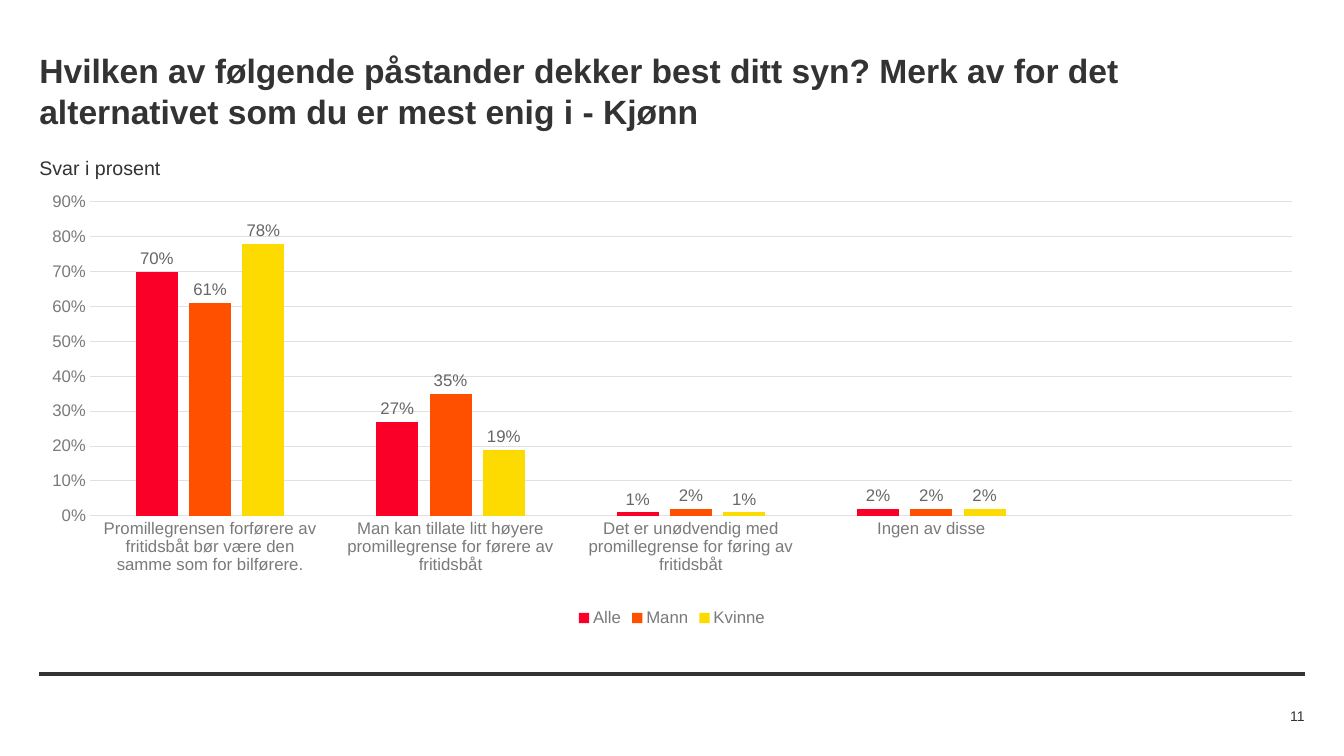
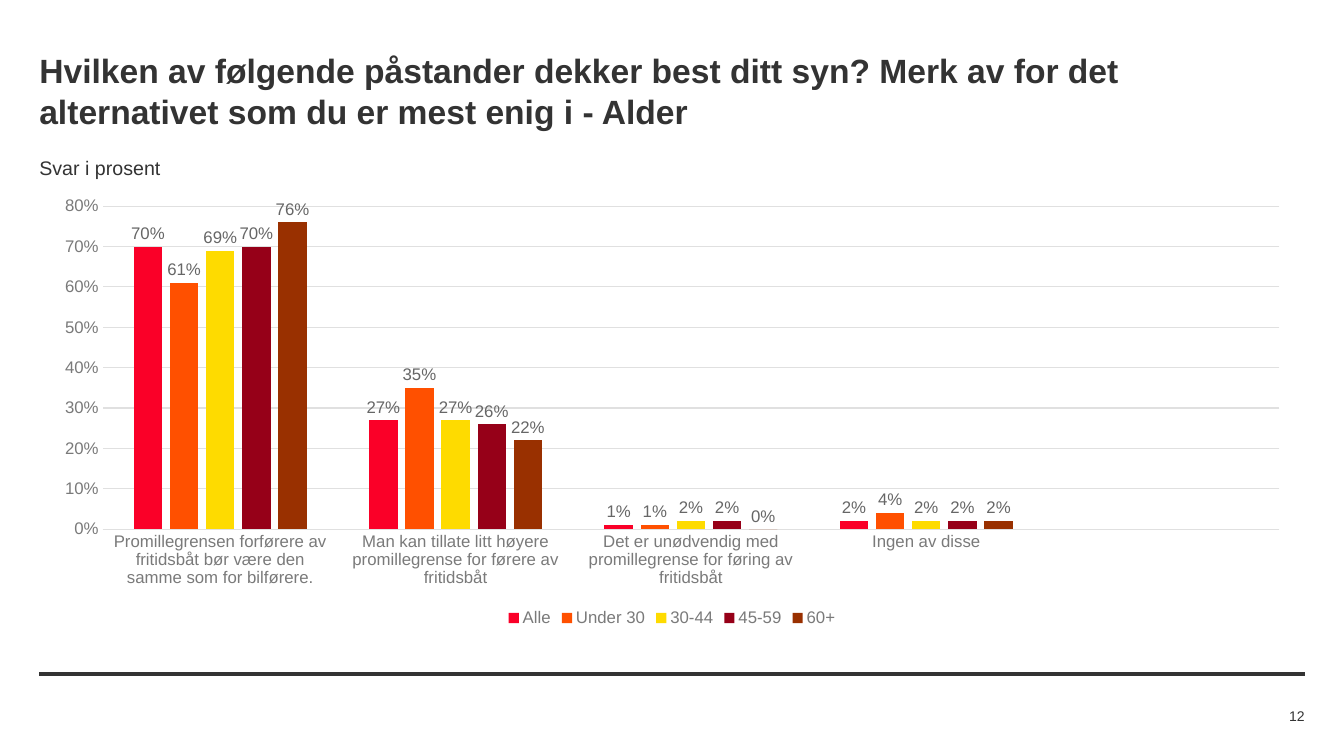
from pptx import Presentation
from pptx.chart.data import CategoryChartData
from pptx.dml.color import RGBColor
from pptx.enum.chart import XL_CHART_TYPE, XL_LABEL_POSITION, XL_LEGEND_POSITION, XL_TICK_MARK
from pptx.enum.shapes import MSO_CONNECTOR
from pptx.enum.text import MSO_ANCHOR, PP_ALIGN
from pptx.oxml import parse_xml
from pptx.oxml.ns import nsdecls
from pptx.oxml.xmlchemy import OxmlElement
from pptx.util import Inches, Pt

BARS = XL_CHART_TYPE.COLUMN_CLUSTERED
ABOVE = XL_LABEL_POSITION.OUTSIDE_END
BOTTOM = XL_LEGEND_POSITION.BOTTOM
NONE = XL_TICK_MARK.NONE
LINE = MSO_CONNECTOR.STRAIGHT
TOP, MID = MSO_ANCHOR.TOP, MSO_ANCHOR.MIDDLE
LEFT, RIGHT = PP_ALIGN.LEFT, PP_ALIGN.RIGHT

# Shared look
FACE, DARK, GREY, MUTED, RULE = "Arial", "333333", "7A7A7A", "666666", "E0E0E0"
FILLS = ["FA0028", "FF5000", "FEDB00", "960018", "993000"]
W, H = Inches(13.33), Inches(7.5)
EDGE = Inches(0.39)
WIDE = W - 2 * EDGE

# Shared wording; the last group is left empty
ASK = ("Hvilken av følgende påstander dekker best ditt syn? Merk av for det "
       "alternativet som du er mest enig i - ")
CLAIMS = [
    "Promillegrensen forførere av fritidsbåt bør være den samme som for bilførere.",
    "Man kan tillate litt høyere promillegrense for førere av fritidsbåt",
    "Det er unødvendig med promillegrense for føring av fritidsbåt",
    "Ingen av disse",
    "",
]

# Topic, page, axis top, plot area as shares of the chart, answers
PAGES = [
    ("Kjønn", 11, 0.9, (0.04, 0.03, 0.95, 0.71), {
        "Alle": [0.70, 0.27, 0.01, 0.02],
        "Mann": [0.61, 0.35, 0.02, 0.02],
        "Kvinne": [0.78, 0.19, 0.01, 0.02],
    }),
    ("Alder", 12, 0.8, (0.05, 0.04, 0.93, 0.73), {
        "Alle": [0.70, 0.27, 0.01, 0.02],
        "Under 30": [0.61, 0.35, 0.01, 0.04],
        "30-44": [0.69, 0.27, 0.02, 0.02],
        "45-59": [0.70, 0.26, 0.02, 0.02],
        "60+": [0.76, 0.22, 0, 0.02],
    }),
]


def style(font, size, tint, bold=False):
    font.name, font.size, font.bold = FACE, Pt(size), bold
    font.color.rgb = RGBColor.from_string(tint)


def write(slide, text, box, size, bold=False, wrap=True, side=LEFT, hold=TOP):
    frame = slide.shapes.add_textbox(*box).text_frame
    frame.margin_left = frame.margin_right = frame.margin_top = frame.margin_bottom = 0
    frame.word_wrap, frame.vertical_anchor = wrap, hold
    para = frame.paragraphs[0]
    para.text, para.alignment = text, side
    style(para.font, size, DARK, bold)


deck = Presentation()
deck.slide_width, deck.slide_height = W, H

for topic, page, peak, plot_box, answers in PAGES:
    slide = deck.slides.add_slide(deck.slide_layouts[6])

    # Footer rule
    rule = slide.shapes.add_connector(LINE, EDGE, Inches(6.69), W - EDGE, Inches(6.69))
    rule.line.width = Pt(3)
    rule.line.color.rgb = RGBColor.from_string(DARK)
    rule._element.spPr.append(OxmlElement("a:effectLst"))

    # Chart data
    data = CategoryChartData(number_format="0%")
    data.categories = CLAIMS
    for name, shares in answers.items():
        data.add_series(name, shares + [None])
    chart = slide.shapes.add_chart(
        BARS, EDGE, Inches(1.87), WIDE, Inches(4.39), data).chart
    chart.has_title = False
    style(chart.font, 10, DARK)

    # Legend
    chart.has_legend = True
    chart.legend.position = BOTTOM
    chart.legend.include_in_layout = False
    style(chart.legend.font, 12, GREY)

    # Axes
    cats, vals = chart.category_axis, chart.value_axis
    for axis in (cats, vals):
        axis.major_tick_mark = axis.minor_tick_mark = NONE
        style(axis.tick_labels.font, 12, GREY)
    vals.minimum_scale, vals.maximum_scale, vals.major_unit = 0, peak, 0.1
    vals.tick_labels.number_format = "0%"
    vals.tick_labels.number_format_is_linked = False
    vals.format.line.fill.background()
    for line in (cats.format.line, vals.major_gridlines.format.line):
        line.width = Pt(0.75)
        line.color.rgb = RGBColor.from_string(RULE)

    # Bars and their labels
    plot = chart.plots[0]
    plot.gap_width, plot.overlap, plot.vary_by_categories = 219, -27, False
    for bars, fill in zip(plot.series, FILLS):
        bars.format.fill.solid()
        bars.format.fill.fore_color.rgb = RGBColor.from_string(fill)
        tags = bars.data_labels
        tags.show_value, tags.position = True, ABOVE
        tags.number_format, tags.number_format_is_linked = "0%", False
        style(tags.font, 12, MUTED)

    # Inner plot area
    area = chart._chartSpace.chart.plotArea
    for old in area.xpath("c:layout"):
        area.remove(old)
    parts = "".join(f'<c:{key}Mode val="edge"/>' for key in "xy")
    parts += "".join(f'<c:{key} val="{share}"/>' for key, share in zip("xywh", plot_box))
    area.insert(0, parse_xml(
        f'<c:layout {nsdecls("c")}><c:manualLayout><c:layoutTarget val="inner"/>'
        f'{parts}</c:manualLayout></c:layout>'))

    # Title, subtitle and page number
    write(slide, ASK + topic, (EDGE, Inches(0.5), WIDE, Inches(0.44)), 24, bold=True)
    write(slide, "Svar i prosent", (EDGE, Inches(1.55), Inches(1.22), Inches(0.24)),
          14, wrap=False)
    write(slide, str(page), (W - EDGE - Inches(1.06), Inches(6.99), Inches(1.06), Inches(0.22)),
          10, side=RIGHT, hold=MID)

deck.save("out.pptx")
